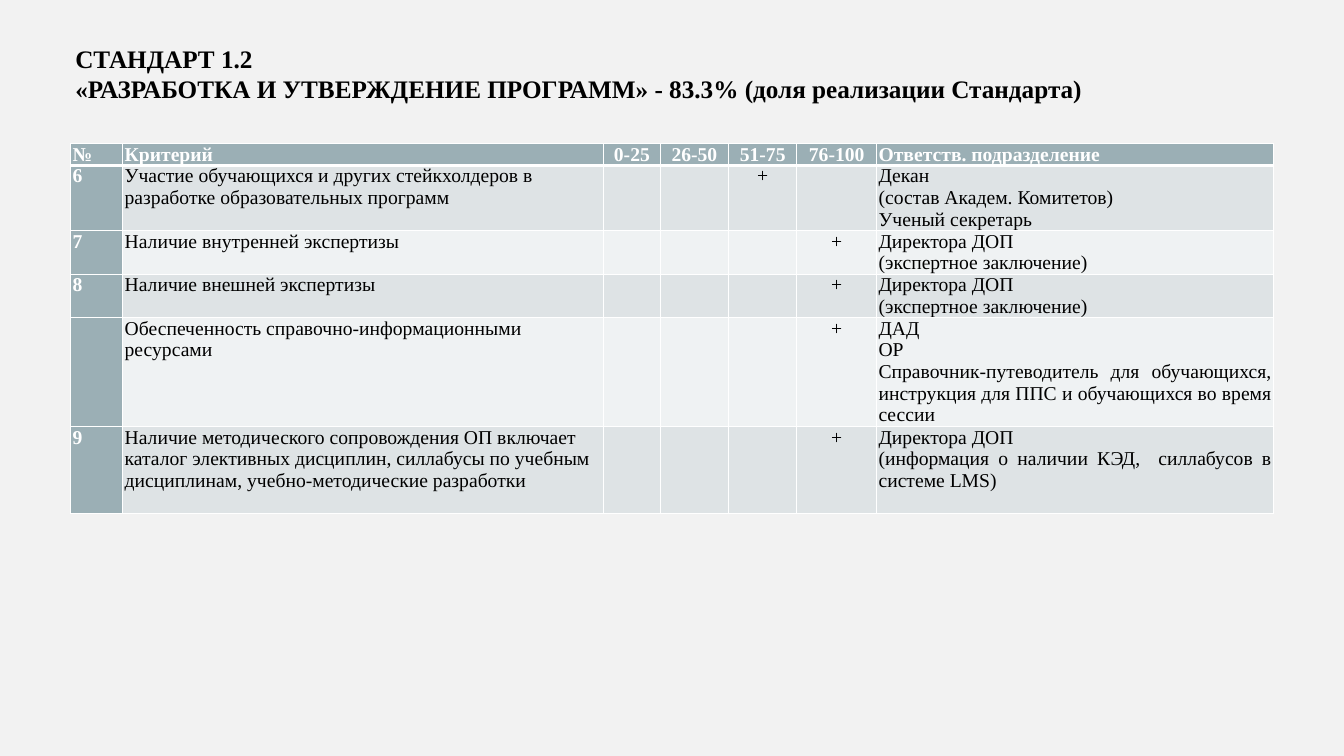
import pptx
import pptx.util
import pptx.dml.color
import pptx.enum.text
import pptx.oxml

Pt = pptx.util.Pt
RGB = pptx.dml.color.RGBColor
ALIGN = pptx.enum.text.PP_ALIGN

BLACK = RGB(0x00, 0x00, 0x00)
WHITE = RGB(0xFF, 0xFF, 0xFF)
PAPER = RGB(0xF2, 0xF2, 0xF2)
HEAD = RGB(0x9B, 0xAF, 0xB5)
DARK = RGB(0xDE, 0xE3, 0xE5)
LIGHT = RGB(0xEF, 0xF2, 0xF3)

FACE = "Times New Roman"
LINE = 15.55  # height of one table text line
WIDTHS = [37.3, 343.5, 40.5, 48.8, 48.8, 57, 283.6]
ALIGNS = [ALIGN.LEFT, ALIGN.LEFT] + [ALIGN.CENTER] * 4 + [ALIGN.JUSTIFY]

TITLE = ("СТАНДАРТ 1.2\n"
         "«РАЗРАБОТКА И УТВЕРЖДЕНИЕ ПРОГРАММ» - 83.3% (доля реализации Стандарта)")
# Each row: height in lines, then its cells
ROWS = [
    (1, ["№", "Критерий", "0-25", "26-50", "51-75", "76-100",
         "Ответств. подразделение"]),
    (3, ["6", "Участие обучающихся и других стейкхолдеров в разработке "
         "образовательных программ", "", "", "+", "",
         "Декан\n(состав Академ. Комитетов)\nУченый секретарь"]),
    (2, ["7", "Наличие внутренней экспертизы", "", "", "", "+",
         "Директора ДОП\n(экспертное заключение)"]),
    (2, ["8", "Наличие внешней экспертизы", "", "", "", "+",
         "Директора ДОП\n(экспертное заключение)"]),
    (5, ["", "Обеспеченность справочно-информационными ресурсами",
         "", "", "", "+",
         "ДАД\nОР\nСправочник-путеводитель для обучающихся, инструкция "
         "для ППС и обучающихся во время сессии"]),
    (4, ["9", "Наличие методического сопровождения ОП включает каталог "
         "элективных дисциплин, силлабусы по учебным дисциплинам, "
         "учебно-методические разработки", "", "", "", "+",
         "Директора ДОП\n(информация о наличии КЭД,  силлабусов в "
         "системе LMS)"]),
]


def write(frame, text, size, color, bold, align):
    frame.text = text
    for par in frame.paragraphs:
        par.alignment = align
        font = par.font
        font.name, font.size, font.bold = FACE, Pt(size), bold
        font.color.rgb = color


def edge(cell, sides):
    """Draw white borders; sides maps L, R, T, B to widths in points."""
    props = cell._tc.get_or_add_tcPr()
    for spot, (side, width) in enumerate(sides.items()):
        props.insert(spot, pptx.oxml.parse_xml(
            '<a:ln%s xmlns:a="http://schemas.openxmlformats.org/drawingml/2006/main"'
            ' w="%d"><a:solidFill><a:srgbClr val="%s"/></a:solidFill></a:ln%s>'
            % (side, Pt(width), WHITE, side)))


def add_title(slide, left, top, width, height):
    title = slide.shapes.title
    title.left, title.top = Pt(left), Pt(top)
    title.width, title.height = Pt(width), Pt(height)
    frame = title.text_frame
    write(frame, TITLE, 18, BLACK, True, ALIGN.LEFT)
    frame.word_wrap = False
    frame.auto_size = pptx.enum.text.MSO_AUTO_SIZE.NONE
    frame.vertical_anchor = pptx.enum.text.MSO_ANCHOR.MIDDLE


def add_grid(slide, left, top):
    tall = LINE * sum(lines for lines, _ in ROWS)
    grid = slide.shapes.add_table(len(ROWS), len(WIDTHS), Pt(left), Pt(top),
                                  Pt(sum(WIDTHS)), Pt(tall)).table
    for col, width in zip(grid.columns, WIDTHS):
        col.width = Pt(width)
    for r, (lines, texts) in enumerate(ROWS):
        grid.rows[r].height = Pt(lines * LINE)
        for c, text in enumerate(texts):
            cell = grid.cell(r, c)
            cell.margin_left = cell.margin_right = Pt(1.4)
            cell.margin_top = cell.margin_bottom = 0
            # Header row and number column are dark, the rest is banded
            main = r == 0 or c == 0
            cell.fill.solid()
            cell.fill.fore_color.rgb = HEAD if main else DARK if r % 2 else LIGHT
            write(cell.text_frame, text, 14, WHITE if main else BLACK,
                  main, ALIGNS[c])
            edge(cell, {"L": 1, "R": 1, "T": 3 if r == 1 else 1,
                        "B": 3 if r == 0 else 1})


def main():
    deck = pptx.Presentation()
    deck.slide_width, deck.slide_height = Pt(960), Pt(540)
    slide = deck.slides.add_slide(deck.slide_layouts[5])
    # Background
    slide.background.fill.solid()
    slide.background.fill.fore_color.rgb = PAPER
    # Title and table
    add_title(slide, 46.6, 26.8, 741, 51)
    add_grid(slide, 50.4, 102.6)
    deck.save("out.pptx")


if __name__ == "__main__":
    main()
